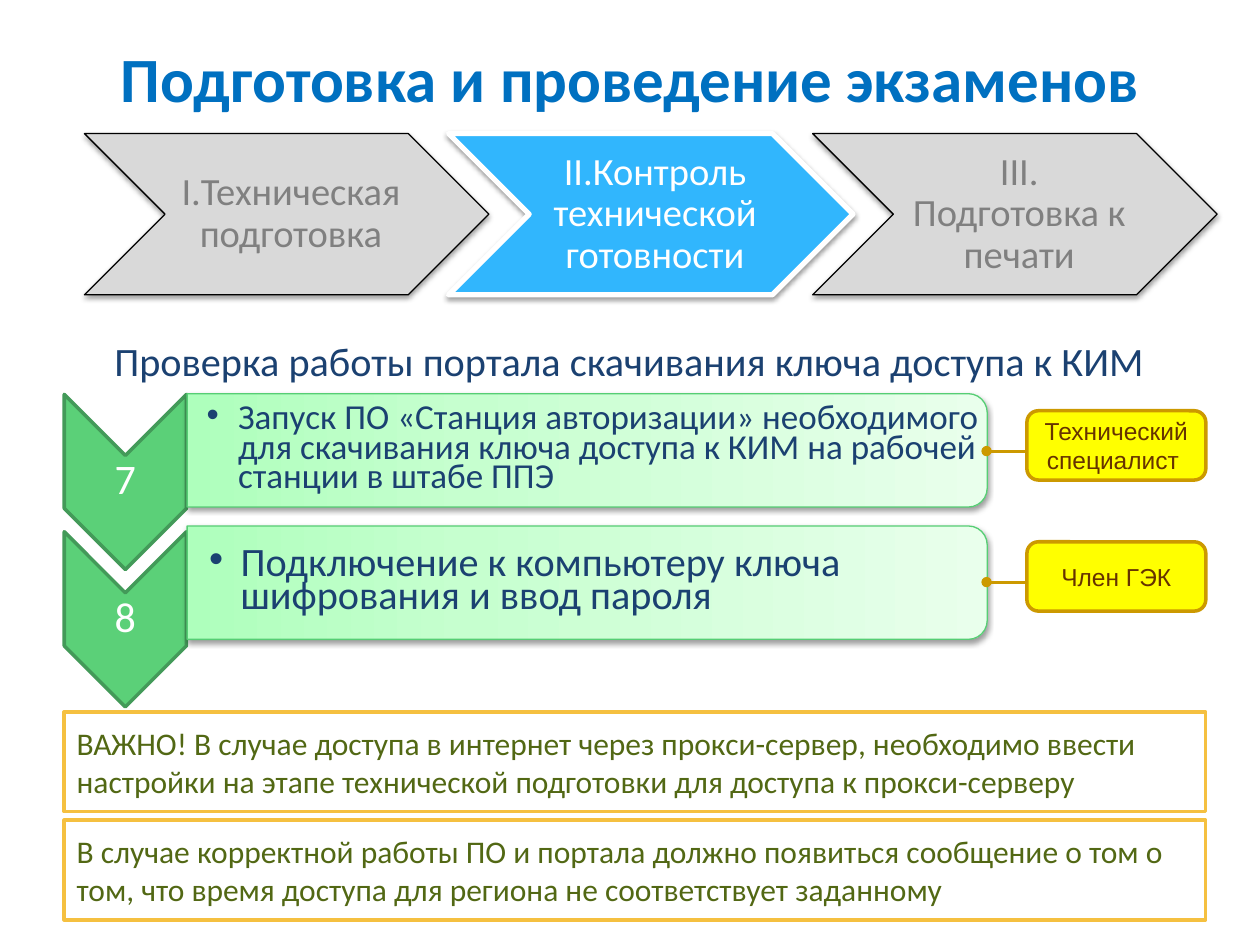
from lxml import etree
from pptx import Presentation
from pptx.dml.color import RGBColor
from pptx.enum import shapes, text
from pptx.oxml import parse_xml
from pptx.oxml.ns import qn
from pptx.util import Inches, Pt

WHITE = RGBColor(0xFF, 0xFF, 0xFF)
BLACK = RGBColor(0, 0, 0)
TITLE_BLUE = RGBColor(0x00, 0x70, 0xC0)
NAVY = RGBColor(0x1B, 0x41, 0x71)
SKY = RGBColor(0x31, 0xB6, 0xFD)
LIGHT_GRAY = RGBColor(0xD9, 0xD9, 0xD9)
GRAY = RGBColor(0x80, 0x80, 0x80)
GREEN = RGBColor(0x5B, 0xD0, 0x78)
DARK_GREEN = RGBColor(0x43, 0x9A, 0x59)
MINT_LINE = RGBColor(0x56, 0xCE, 0x74)
MINT_STOPS = [(0, RGBColor(0xAE, 0xFF, 0xBC)), (35, RGBColor(0xC6, 0xFF, 0xCF)),
              (100, RGBColor(0xE9, 0xFF, 0xEC))]
YELLOW = RGBColor(0xFF, 0xFF, 0x00)
GOLD = RGBColor(0xCC, 0x99, 0x00)
BROWN = RGBColor(0x66, 0x33, 0x00)
AMBER = RGBColor(0xF5, 0xC0, 0x40)
OLIVE = RGBColor(0x52, 0x68, 0x14)
SHADOW = (
    '<a:effectLst xmlns:a="http://schemas.openxmlformats.org/drawingml/2006/main">'
    '<a:outerShdw blurRad="39370" dist="20320" dir="5400000" rotWithShape="0">'
    '<a:srgbClr val="000000"><a:alpha val="38000"/></a:srgbClr>'
    '</a:outerShdw></a:effectLst>'
)

presentation = Presentation()
presentation.slide_width = Inches(10)
presentation.slide_height = Inches(7.5)
slide = presentation.slides.add_slide(presentation.slide_layouts[5])


def add_shape(kind, box, fill, line, width, shadow=False):
    shape = slide.shapes.add_shape(kind, *[Inches(value) for value in box])
    shape.shadow.inherit = False
    if fill is not None:
        shape.fill.solid()
        shape.fill.fore_color.rgb = fill
    shape.line.color.rgb = line
    shape.line.width = Pt(width)
    if shadow:
        properties = shape._element.spPr
        properties.replace(properties.find(qn("a:effectLst")), parse_xml(SHADOW))
    return shape


def write(shape, words, size, color, align=text.PP_ALIGN.CENTER, font="Calibri",
          insets=(0.1, 0.05), spacing=None, anchor=text.MSO_ANCHOR.MIDDLE, bullet=False):
    frame = shape.text_frame
    frame.word_wrap = True
    frame.vertical_anchor = anchor
    frame.margin_left = Inches(insets[0])
    frame.margin_right = Inches(insets[-1] if spacing else insets[0])
    frame.margin_top = frame.margin_bottom = Inches(insets[1])
    paragraph = frame.paragraphs[0]
    paragraph.alignment = align
    if spacing:
        paragraph.line_spacing = spacing
    if bullet:
        properties = paragraph._p.get_or_add_pPr()
        properties.set("marL", str(Inches(0.25)))
        properties.set("indent", str(-Inches(0.25)))
        etree.SubElement(properties, qn("a:buFont")).set("typeface", "Arial")
        etree.SubElement(properties, qn("a:buChar")).set("char", "•")
    run = paragraph.add_run()
    run.text = words
    run.font.name = font
    run.font.size = Pt(size)
    run.font.color.rgb = color
    return run


title = slide.shapes.title
title.left, title.top, title.width, title.height = [Inches(v) for v in (0.5, 0.18, 9, 0.87)]
write(title, "Подготовка и проведение экзаменов", 36, TITLE_BLUE).font.bold = True

stages = [
    ("I.Техническая подготовка", LIGHT_GRAY, BLACK, 0.75, GRAY),
    ("II.Контроль технической готовности", SKY, WHITE, 3, WHITE),
    ("III. Подготовка к печати", LIGHT_GRAY, BLACK, 0.75, GRAY),
]
for index, (words, fill, line, width, color) in enumerate(stages):
    left = 0.67 + 2.89 * index
    add_shape(shapes.MSO_SHAPE.CHEVRON, (left, 1.06, 3.21, 1.28), fill, line, width, True)
    label = slide.shapes.add_textbox(Inches(left + 0.64), Inches(1.06), Inches(1.93), Inches(1.28))
    write(label, words, 22, color, insets=(0.1, 0.03, 0.03), spacing=0.9)

subtitle = slide.shapes.add_textbox(Inches(0.5), Inches(2.62), Inches(9), Inches(0.71))
write(subtitle, "Проверка работы портала скачивания ключа доступа к КИМ", 23, NAVY,
      anchor=text.MSO_ANCHOR.TOP)

steps = [
    ("7", 3.34, 3.17, 20, (0.16, 0.01),
     "Запуск ПО «Станция авторизации» необходимого для скачивания ключа доступа к КИМ "
     "на рабочей станции в штабе ППЭ", 3.26, "Технический специалист "),
    ("8", 4.43, 4.22, 23, (0.18, 0.02),
     "Подключение к компьютеру ключа шифрования и ввод пароля", 4.3, "Член ГЭК"),
]
for number, chevron_top, panel_top, size, insets, words, role_top, role in steps:
    chevron = add_shape(shapes.MSO_SHAPE.CHEVRON, (0.3, chevron_top, 1.39, 0.97),
                        GREEN, DARK_GREEN, 2)
    chevron.rotation = 90
    label = slide.shapes.add_textbox(Inches(0.51), Inches(chevron_top + 0.27),
                                     Inches(0.97), Inches(0.42))
    write(label, number, 24, WHITE, insets=(0.02, 0.02), spacing=0.9)

    panel = add_shape(shapes.MSO_SHAPE.ROUND_2_SAME_RECTANGLE,
                      (4.21, panel_top - 2.77, 0.9, 6.35), None, MINT_LINE, 0.75, True)
    panel.rotation = 90
    panel.fill.gradient()
    panel.fill.gradient_angle = 90
    stop_list = panel._element.spPr.find(qn("a:gradFill")).find(qn("a:gsLst"))
    for stop in list(stop_list):
        stop_list.remove(stop)
    for position, color in MINT_STOPS:
        stop = etree.SubElement(stop_list, qn("a:gs"), pos=str(position * 1000))
        etree.SubElement(stop, qn("a:srgbClr"), val=str(color))
    description = slide.shapes.add_textbox(Inches(1.48), Inches(panel_top),
                                           Inches(6.31), Inches(0.81))
    write(description, words, size, NAVY, text.PP_ALIGN.LEFT, insets=insets,
          spacing=0.7, bullet=True)

    role_box = add_shape(shapes.MSO_SHAPE.ROUNDED_RECTANGLE, (8.15, role_top, 1.42, 0.55),
                         YELLOW, GOLD, 2)
    write(role_box, role, 14, BROWN, font="Arial")
    link_y = Inches(role_top + 0.32)
    connector = slide.shapes.add_connector(shapes.MSO_CONNECTOR.STRAIGHT,
                                           Inches(8.15), link_y, Inches(7.83), link_y)
    connector.line.color.rgb = GOLD
    connector.line.width = Pt(1.75)
    etree.SubElement(connector.line._get_or_add_ln(), qn("a:tailEnd"), type="oval")
    etree.SubElement(connector._element.spPr, qn("a:effectLst"))

notices = [
    (5.65, "ВАЖНО! В случае доступа в интернет через прокси-сервер, необходимо ввести "
           "настройки на этапе технической подготовки для доступа к прокси-серверу"),
    (6.51, "В случае корректной работы ПО и портала должно появиться сообщение о том о том, "
           "что время доступа для региона не соответствует заданному"),
]
for top, words in notices:
    notice = add_shape(shapes.MSO_SHAPE.RECTANGLE, (0.51, top, 9.06, 0.79), WHITE, AMBER, 2)
    write(notice, words, 18, OLIVE, text.PP_ALIGN.LEFT)

presentation.save("out.pptx")
